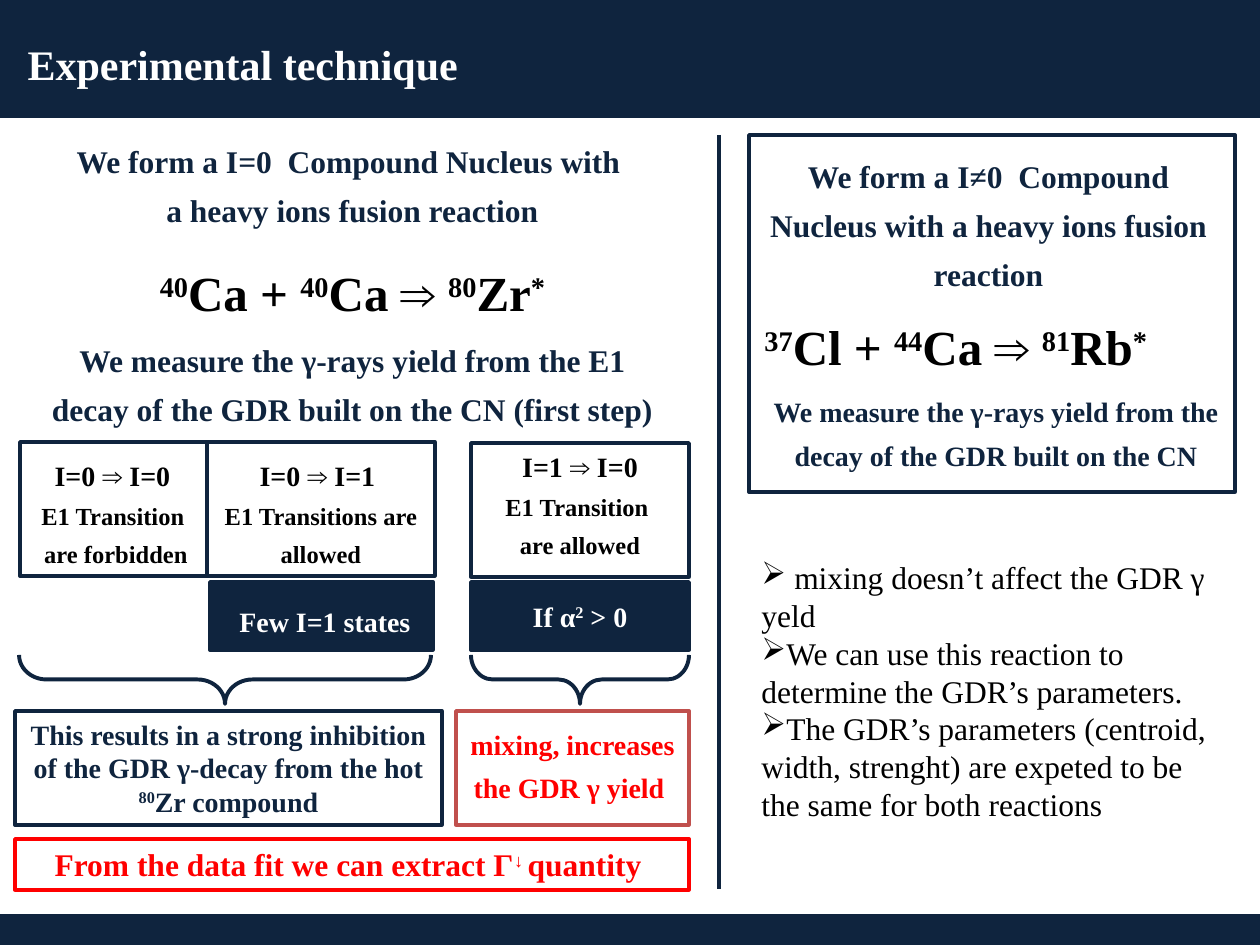
from lxml import etree
from pptx import Presentation
from pptx import util as u
from pptx.dml.color import RGBColor
from pptx.enum import shapes, text
from pptx.oxml.ns import qn

SCALE = 914400 / 126
FONT = "Times New Roman"
NAVY, WHITE, BLACK, RED, BRICK = "0F243E", "FFFFFF", "000000", "FF0000", "C0504D"
TOP, MIDDLE = text.MSO_ANCHOR.TOP, text.MSO_ANCHOR.MIDDLE
CENTER, LEFT = text.PP_ALIGN.CENTER, text.PP_ALIGN.LEFT

# Content: paragraphs are (text, size, line spacing); ^...^ marks a superscript
TITLE = [("Experimental technique", 24, 1)]
# Boxes: left, top, width, height, fill, line, text colour, anchor, align, paragraphs
BOXES = [
    # Isospin transitions
    (20, 442, 192, 134, WHITE, NAVY, BLACK, TOP, CENTER,
     [("I=0 ⇒ I=0 ", 16, 1.3), ("E1 Transition ", 14, 1.3), ("are forbidden", 14, 1.3)]),
    (207, 442, 228, 134, WHITE, NAVY, BLACK, TOP, CENTER,
     [("I=0 ⇒ I=1 ", 16, 1.3), ("E1 Transitions are allowed", 14, 1.3)]),
    (471, 443, 218, 134, WHITE, NAVY, BLACK, TOP, CENTER,
     [("I=1 ⇒ I=0", 16, 1), ("E1 Transition ", 14, 1.3), ("are allowed", 14, 1.3)]),
    (210, 582, 223, 68, NAVY, NAVY, WHITE, MIDDLE, CENTER, [(" Few I=1 states", 16, 1.3)]),
    (471, 582, 218, 68, NAVY, NAVY, WHITE, MIDDLE, CENTER, [("If α^2^ > 0", 16, 1)]),
    # Self-conjugate reaction
    (30, 125, 645, 110, None, None, NAVY, MIDDLE, CENTER,
     [("We form a I=0  Compound Nucleus with ", 18, 1.3),
      ("a heavy ions fusion reaction", 18, 1.3)]),
    (30, 239, 645, 83, WHITE, None, BLACK, TOP, CENTER,
     [("^40^Ca + ^40^Ca ⇒ ^80^Zr^*^", 28, 1.3)]),
    (30, 324, 645, 110, None, None, NAVY, MIDDLE, CENTER,
     [("We measure the γ-rays yield from the E1 decay of the GDR built on the CN (first step)",
       18, 1.3)]),
    # Conclusions
    (15, 711, 427, 114, WHITE, NAVY, NAVY, TOP, CENTER,
     [("This results in a strong inhibition of the GDR γ-decay from the hot ^80^Zr compound",
       16, 1)]),
    (456, 711, 233, 114, WHITE, BRICK, RED, TOP, CENTER,
     [("mixing, increases the GDR γ yield ", 16, 1.3)]),
    (15, 839, 674, 51, WHITE, RED, RED, TOP, CENTER,
     [("From the data fit we can extract Γ^↓ ^quantity ", 18, 1)]),
    # Reference reaction and its frame
    (752, 293, 472, 83, WHITE, None, BLACK, TOP, LEFT,
     [("^37^Cl + ^44^Ca ⇒ ^81^Rb^*^", 28, 1.3)]),
    (753, 145, 471, 149, WHITE, None, NAVY, MIDDLE, CENTER,
     [("We form a I≠0  Compound Nucleus with a heavy ions fusion reaction", 18, 1.3)]),
    (748, 373, 496, 110, WHITE, None, NAVY, MIDDLE, CENTER,
     [("We measure the γ-rays yield from the decay of the GDR built on the CN", 16, 1.3)]),
    (749, 135, 486, 357, None, NAVY, NAVY, TOP, CENTER, []),
]
# Braces as drawn: left, top, width, height, curvature
BRACES = [(19, 655, 412, 49, 0.56), (471, 655, 218, 49, 0.44)]
NOTES = [
    (" mixing doesn’t affect the GDR γ yeld", 18, 1),
    ("We can use this reaction to determine the GDR’s parameters.", 18, 1),
    ("The GDR’s parameters (centroid, width, strenght) are expeted to be "
     "the same for both reactions", 18, 1),
]


def px(value):
    return u.Emu(round(value * SCALE))


def color(value):
    return RGBColor.from_string(value)


def write(shape, paragraphs, ink, anchor=TOP, align=LEFT, bold=True):
    frame = shape.text_frame
    frame.word_wrap = True
    frame.auto_size = text.MSO_AUTO_SIZE.NONE
    frame.vertical_anchor = anchor
    for i, (content, size, spacing) in enumerate(paragraphs):
        paragraph = frame.add_paragraph() if i else frame.paragraphs[0]
        paragraph.alignment = align
        paragraph.line_spacing = spacing
        for j, part in enumerate(content.split("^")):
            if not part:
                continue
            run = paragraph.add_run()
            run.text = part
            run.font.name, run.font.size, run.font.bold = FONT, u.Pt(size), bold
            run.font.color.rgb = color(ink)
            if j % 2:
                run.font._element.set("baseline", "30000")


def add_shape(slide, kind, bounds, fill=None, line=None, width=2):
    shape = slide.shapes.add_shape(kind, *map(px, bounds))
    shape.shadow.inherit = False
    if fill:
        shape.fill.solid()
        shape.fill.fore_color.rgb = color(fill)
    else:
        shape.fill.background()
    if line:
        shape.line.color.rgb = color(line)
        shape.line.width = u.Pt(width)
    else:
        shape.line.fill.background()
    return shape


def main():
    presentation = Presentation()
    presentation.slide_width, presentation.slide_height = px(1260), px(945)
    slide = presentation.slides.add_slide(presentation.slide_layouts[5])
    rectangle = shapes.MSO_SHAPE.RECTANGLE

    # Header and footer bands, with the title above the header
    header = add_shape(slide, rectangle, (0, 0, 1260, 116), NAVY, NAVY)
    add_shape(slide, rectangle, (0, 915, 1260, 30), NAVY, NAVY, 0.75)
    title = slide.shapes.title
    title.left, title.top, title.width, title.height = map(px, (15, 32, 1062, 63))
    write(title, TITLE, WHITE)
    header._element.addnext(title._element)

    # Text boxes and frames
    for *bounds, fill, line, ink, anchor, align, paragraphs in BOXES:
        if fill or line:
            shape = add_shape(slide, rectangle, bounds, fill, line)
        else:
            shape = slide.shapes.add_textbox(*map(px, bounds))
        write(shape, paragraphs, ink, anchor, align)

    # Braces: a right brace turned a quarter about its centre
    for left, top, width, height, curve in BRACES:
        shift = (width - height) / 2
        brace = add_shape(slide, shapes.MSO_SHAPE.RIGHT_BRACE,
                          (left + shift, top - shift, height, width), None, NAVY, 2.25)
        brace.rotation = 90
        brace.adjustments[0] = curve

    # Bulleted notes
    notes = slide.shapes.add_textbox(*map(px, (749, 552, 486, 317)))
    write(notes, NOTES, BLACK, bold=False)
    for paragraph in notes.text_frame.paragraphs:
        properties = paragraph._p.get_or_add_pPr()
        etree.SubElement(properties, qn("a:buChar")).set("char", "➢")

    # Column divider
    divider = slide.shapes.add_connector(
        shapes.MSO_CONNECTOR.STRAIGHT, *map(px, (719, 135, 719, 889)))
    divider.line.color.rgb = color(NAVY)
    divider.line.width = u.Pt(2.25)
    etree.SubElement(divider._element.spPr, qn("a:effectLst"))

    presentation.save("out.pptx")


if __name__ == "__main__":
    main()
